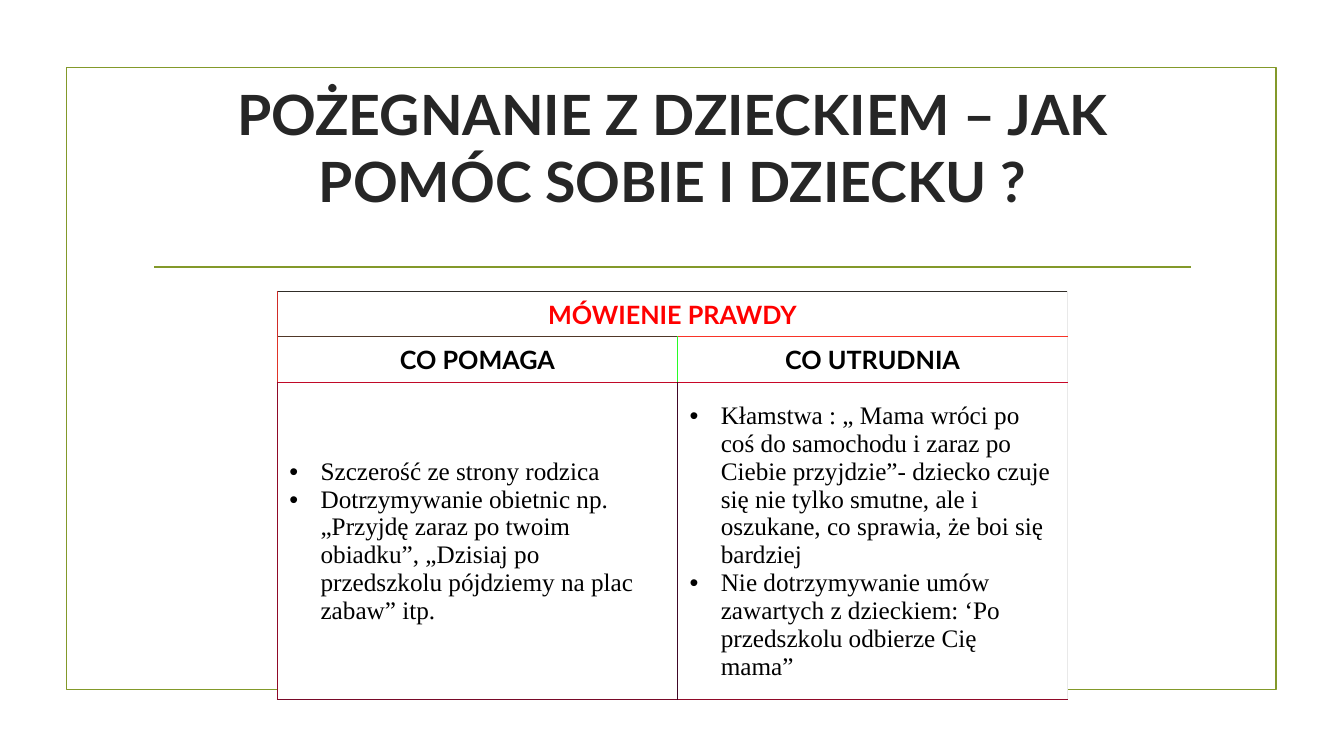
from dataclasses import dataclass

from lxml import etree
from pptx import Presentation
from pptx.dml.color import RGBColor
from pptx.enum import shapes, text
from pptx.oxml import ns
from pptx.util import Inches, Pt

GREEN = "83992A"
INK = "262626"
BLACK = "000000"
RED = "FF0000"
WHITE = "FFFFFF"
PALE = "E9E9E9"
HEADING_FONT = "Lato"
BODY_FONT = "Times New Roman"
BULLET_INDENT = Inches(0.31)
BORDER_WIDTH = Pt(0.6)
COLUMN_WIDTHS = (3.97, 3.87)
ROW_HEIGHTS = (0.45, 0.45, 2.92)


@dataclass
class Entry:
    row: int
    column: int
    lines: list[str]
    borders: dict[str, str]
    color: str = BLACK
    bulleted: bool = False


ENTRIES = [
    Entry(0, 0, ["MÓWIENIE PRAWDY"],
          {"L": "D02C28", "R": PALE, "T": "302D28", "B": "503728"}, color=RED),
    Entry(1, 0, ["CO POMAGA"],
          {"L": "E03428", "R": "28FC27", "T": "503728", "B": "C00928"}),
    Entry(1, 1, ["CO UTRUDNIA"],
          {"L": "28FC27", "R": PALE, "T": "F83428", "B": "C80728"}),
    Entry(2, 0, ["Szczerość ze strony rodzica",
                 "Dotrzymywanie obietnic np. „Przyjdę zaraz po twoim obiadku”, "
                 "„Dzisiaj po przedszkolu pójdziemy na plac zabaw” itp."],
          {"L": "900928", "R": "400828", "T": "C00928", "B": "780928"}, bulleted=True),
    Entry(2, 1, ["Kłamstwa : „ Mama wróci po coś do samochodu i zaraz po Ciebie "
                 "przyjdzie”- dziecko czuje się nie tylko smutne, ale i oszukane, "
                 "co sprawia, że boi się bardziej",
                 "Nie dotrzymywanie umów zawartych z dzieckiem: ‘Po przedszkolu "
                 "odbierze Cię mama”"],
          {"L": "400828", "R": PALE, "T": "C80728", "B": "900928"}, bulleted=True),
]


def rgb(value: str) -> RGBColor:
    return RGBColor.from_string(value)


def apply(target, values: dict) -> None:
    """Set each named attribute on the target."""
    for name, value in values.items():
        setattr(target, name, value)


def style_font(font, name: str, size: float, color: str, bold: bool) -> None:
    apply(font, {"name": name, "size": Pt(size), "bold": bold})
    font.color.rgb = rgb(color)


def style_line(line) -> None:
    line.color.rgb = rgb(GREEN)
    line.width = Pt(1.25)


def add_bullet(paragraph) -> None:
    properties = paragraph._p.get_or_add_pPr()
    properties.set("marL", str(BULLET_INDENT))
    properties.set("indent", str(-BULLET_INDENT))
    font = etree.SubElement(properties, ns.qn("a:buFont"))
    font.set("typeface", "Arial")
    etree.SubElement(properties, ns.qn("a:buChar")).set("char", "•")


def add_borders(cell, borders: dict[str, str]) -> None:
    properties = cell._tc.get_or_add_tcPr()
    for side, color in borders.items():
        line = etree.SubElement(properties, ns.qn(f"a:ln{side}"), w=str(BORDER_WIDTH))
        fill = etree.SubElement(line, ns.qn("a:solidFill"))
        etree.SubElement(fill, ns.qn("a:srgbClr"), val=color)


def fill_cell(cell, entry: Entry) -> None:
    add_borders(cell, entry.borders)
    cell.fill.solid()
    cell.fill.fore_color.rgb = rgb(WHITE)
    apply(cell, {
        "vertical_anchor": text.MSO_ANCHOR.MIDDLE,
        "margin_left": Inches(0.12), "margin_right": Inches(0.12),
        "margin_top": Inches(0.08), "margin_bottom": Inches(0.07),
    })
    cell.text_frame.text = "\n".join(entry.lines)
    for paragraph in cell.text_frame.paragraphs:
        if entry.bulleted:
            add_bullet(paragraph)
        else:
            paragraph.alignment = text.PP_ALIGN.CENTER
        font_name = BODY_FONT if entry.bulleted else HEADING_FONT
        for run in paragraph.runs:
            style_font(run.font, font_name, 18, entry.color, not entry.bulleted)


def add_frame(slide) -> None:
    frame = slide.shapes.add_shape(
        shapes.MSO_SHAPE.RECTANGLE, Inches(0.66), Inches(0.67), Inches(12), Inches(6.17))
    frame.shadow.inherit = False
    frame.fill.background()
    style_line(frame.line)


def add_divider(slide) -> None:
    divider = slide.shapes.add_connector(
        shapes.MSO_CONNECTOR.STRAIGHT,
        Inches(1.53), Inches(2.65), Inches(11.81), Inches(2.65))
    style_line(divider.line)
    etree.SubElement(divider._element.spPr, ns.qn("a:effectLst"))


def add_title(slide) -> None:
    title = slide.shapes.add_textbox(
        Inches(1.42), Inches(1.07), Inches(10.5), Inches(1.43)).text_frame
    apply(title, {
        "word_wrap": True,
        "vertical_anchor": text.MSO_ANCHOR.MIDDLE,
        "margin_bottom": Inches(0.71),
    })
    heading = title.paragraphs[0]
    heading.alignment = text.PP_ALIGN.CENTER
    run = heading.add_run()
    run.text = "POŻEGNANIE Z DZIECKIEM – JAK POMÓC SOBIE I DZIECKU ?"
    style_font(run.font, HEADING_FONT, 39.6, INK, True)


def add_advice_table(slide) -> None:
    advice = slide.shapes.add_table(
        len(ROW_HEIGHTS), len(COLUMN_WIDTHS), Inches(2.75), Inches(2.89),
        Inches(sum(COLUMN_WIDTHS)), Inches(sum(ROW_HEIGHTS))).table
    apply(advice, {"first_row": False, "horz_banding": False})
    for column, width in zip(advice.columns, COLUMN_WIDTHS):
        column.width = Inches(width)
    for row, height in zip(advice.rows, ROW_HEIGHTS):
        row.height = Inches(height)
    advice.cell(0, 0).merge(advice.cell(0, 1))
    for entry in ENTRIES:
        fill_cell(advice.cell(entry.row, entry.column), entry)


def main() -> None:
    deck = Presentation()
    apply(deck, {"slide_width": Inches(13.33), "slide_height": Inches(7.5)})
    slide = deck.slides.add_slide(deck.slide_layouts[6])
    add_frame(slide)
    add_divider(slide)
    add_title(slide)
    add_advice_table(slide)
    deck.save("out.pptx")


if __name__ == "__main__":
    main()
